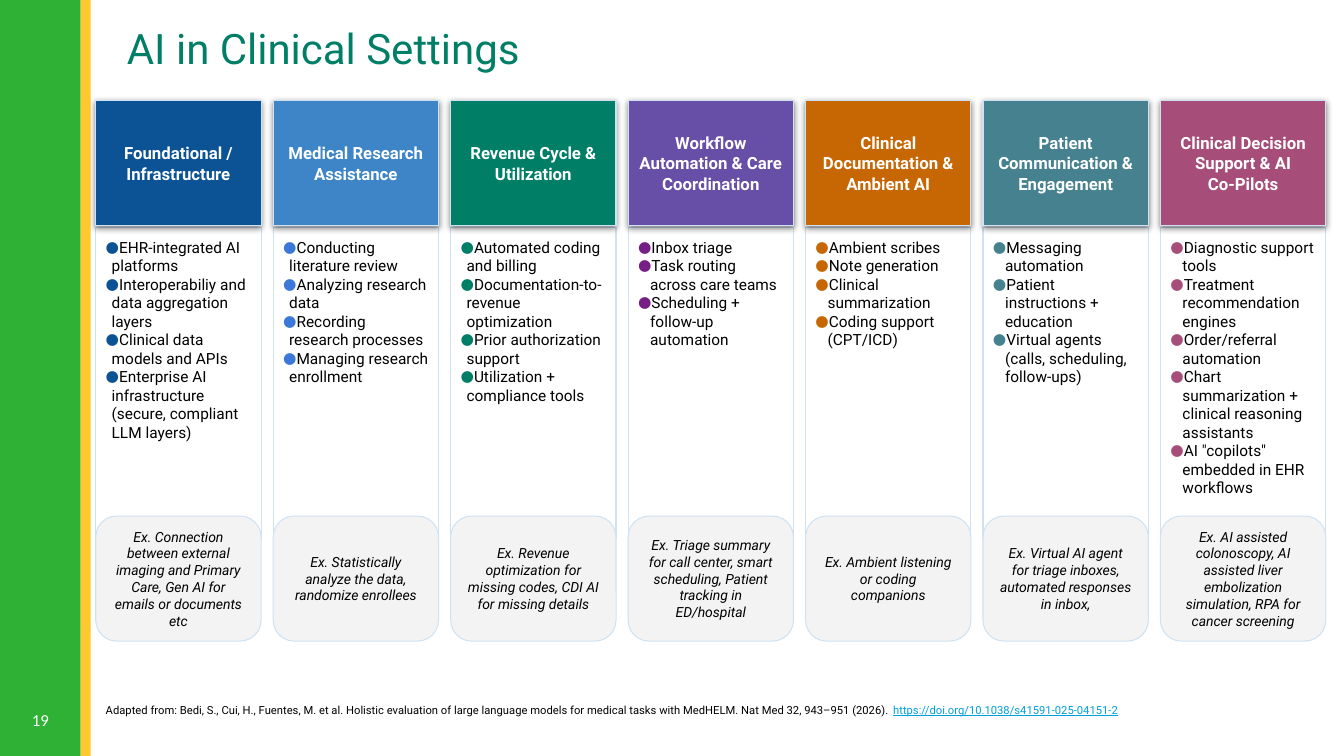
"""Builds the slide "AI in Clinical Settings": seven columns of uses with examples."""
from lxml import etree
from pptx import Presentation
from pptx.dml.color import RGBColor
from pptx.enum.shapes import MSO_SHAPE
from pptx.enum.text import MSO_ANCHOR, PP_ALIGN
from pptx.oxml.ns import qn
from pptx.util import Pt

PX = 9144
RECTANGLE, ROUNDED = MSO_SHAPE.RECTANGLE, MSO_SHAPE.ROUNDED_RECTANGLE
TOP, MIDDLE, BOTTOM = MSO_ANCHOR.TOP, MSO_ANCHOR.MIDDLE, MSO_ANCHOR.BOTTOM
LEFT, CENTER = PP_ALIGN.LEFT, PP_ALIGN.CENTER

WHITE = RGBColor(0xFF, 0xFF, 0xFF)
BLACK = RGBColor(0x00, 0x00, 0x00)
GREEN = RGBColor(0x2E, 0xB1, 0x35)
YELLOW = RGBColor(0xFF, 0xC8, 0x2E)
PALE_BLUE = RGBColor(0xCF, 0xE2, 0xF3)
PALE_GRAY = RGBColor(0xF3, 0xF3, 0xF3)
LINK_BLUE = RGBColor(0x00, 0xA0, 0xDE)
NAVY = RGBColor(0x0B, 0x53, 0x94)
BLUE = RGBColor(0x3D, 0x85, 0xC6)
BRIGHT_BLUE = RGBColor(0x3C, 0x78, 0xD8)
TEAL = RGBColor(0x00, 0x7E, 0x66)
VIOLET = RGBColor(0x67, 0x4E, 0xA7)
PURPLE = RGBColor(0x77, 0x1E, 0x86)
ORANGE = RGBColor(0xC7, 0x67, 0x03)
SLATE = RGBColor(0x45, 0x81, 0x8E)
MAUVE = RGBColor(0xA6, 0x4D, 0x79)

COLUMN_LEFT, COLUMN_PITCH, COLUMN_WIDTH = 95, 176, 164
CARD_HEIGHT = 124

COLUMNS = [
    ("Foundational / Infrastructure", NAVY, NAVY, 6,
     ["EHR-integrated AI platforms", "Interoperabiliy and data aggregation layers",
      "Clinical data models and APIs",
      "Enterprise AI infrastructure (secure, compliant LLM layers)"],
     "Ex. Connection between external imaging and Primary Care, Gen AI for emails or documents etc"),
    ("Medical Research Assistance", BLUE, BRIGHT_BLUE, 6,
     ["Conducting literature review", "Analyzing research data",
      "Recording research processes", "Managing research enrollment"],
     "Ex. Statistically analyze the data, randomize enrollees"),
    ("Revenue Cycle & Utilization", TEAL, TEAL, 6,
     ["Automated coding and billing", "Documentation-to- revenue optimization",
      "Prior authorization support", "Utilization + compliance tools"],
     "Ex. Revenue optimization for missing codes, CDI AI for missing details"),
    ("Workflow Automation & Care Coordination", VIOLET, PURPLE, 12,
     ["Inbox triage", "Task routing across care teams", "Scheduling + follow-up automation"],
     "Ex. Triage summary for call center, smart scheduling, Patient tracking in ED/hospital"),
    ("Clinical Documentation & Ambient AI", ORANGE, ORANGE, 12,
     ["Ambient scribes", "Note generation", "Clinical summarization", "Coding support (CPT/ICD)"],
     "Ex. Ambient listening or coding companions"),
    ("Patient Communication & Engagement", SLATE, SLATE, 12,
     ["Messaging automation", "Patient instructions + education",
      "Virtual agents (calls, scheduling, follow-ups)"],
     "Ex. Virtual AI agent for triage inboxes, automated responses in inbox,"),
    ("Clinical Decision Support & AI\nCo-Pilots", MAUVE, MAUVE, 12,
     ["Diagnostic support tools", "Treatment recommendation engines",
      "Order/referral automation", "Chart summarization + clinical reasoning assistants",
      'AI "copilots" embedded in EHR workflows'],
     "Ex. AI assisted colonoscopy, AI assisted liver embolization simulation, RPA for cancer screening"),
]

presentation = Presentation()
presentation.slide_width = 1333 * PX
presentation.slide_height = 750 * PX
slide = presentation.slides.add_slide(presentation.slide_layouts[6])


def add_box(left, top, width, height, preset=None, fill=None, line=None, anchor=MIDDLE, inset=10):
    """Adds a shape, or a text box when no preset is given."""
    place = [length * PX for length in (left, top, width, height)]
    if preset is None:
        shape = slide.shapes.add_textbox(*place)
    else:
        shape = slide.shapes.add_shape(preset, *place)
        shape.shadow.inherit = False
        shape.fill.solid()
        shape.fill.fore_color.rgb = fill
        if line is None:
            shape.line.fill.background()
        else:
            shape.line.color.rgb = line
            shape.line.width = Pt(0.75)
    frame = shape.text_frame
    frame.word_wrap = True
    frame.vertical_anchor = anchor
    frame.margin_left = frame.margin_right = 10 * PX
    frame.margin_top = frame.margin_bottom = inset * PX
    return shape


def add_text(paragraph, text, size, color, align=LEFT, name="Roboto", bold=None, italic=None):
    """Adds a run per line of text and returns the last one."""
    paragraph.alignment = align
    for index, part in enumerate(text.split("\n")):
        if index:
            paragraph.add_line_break()
        run = paragraph.add_run()
        run.text = part
        font = run.font
        font.size, font.name, font.bold, font.italic = Pt(size), name, bold, italic
        font.color.rgb = color
    return run


add_box(0, 0, 80, 750, RECTANGLE, GREEN)
add_box(80, 0, 10, 750, RECTANGLE, YELLOW)
number = add_box(0, 699, 80, 30, anchor=BOTTOM, inset=5)
add_text(number.text_frame.paragraphs[0], "19", 12, WHITE, CENTER, "Calibri")

title = add_box(116, 23, 1149, 55, inset=5).text_frame.paragraphs[0]
title.line_spacing = 0.9
add_text(title, "AI in Clinical Settings", 30, TEAL)

for index, (heading, fill, bullet_color, indent, uses, example) in enumerate(COLUMNS):
    left = COLUMN_LEFT + index * COLUMN_PITCH

    body = add_box(left, 226, COLUMN_WIDTH, 308, RECTANGLE, WHITE, PALE_BLUE, TOP)
    for row, use in enumerate(uses):
        frame = body.text_frame
        paragraph = frame.add_paragraph() if row else frame.paragraphs[0]
        properties = paragraph._p.get_or_add_pPr()
        properties.set("marL", str(indent * PX))
        properties.set("indent", str(-indent * PX))
        bullet_fill = etree.SubElement(properties, qn("a:buClr"))
        etree.SubElement(bullet_fill, qn("a:srgbClr"), val=str(bullet_color))
        etree.SubElement(properties, qn("a:buFont"), typeface="Roboto")
        etree.SubElement(properties, qn("a:buChar"), char="●")
        add_text(paragraph, use, 11, BLACK)

    card = add_box(left, 512, COLUMN_WIDTH, CARD_HEIGHT, ROUNDED, PALE_GRAY, PALE_BLUE)
    add_text(card.text_frame.paragraphs[0], example, 10, BLACK, CENTER, italic=True)

    header = add_box(left, 100, COLUMN_WIDTH, CARD_HEIGHT, RECTANGLE, fill, PALE_BLUE)
    add_text(header.text_frame.paragraphs[0], heading, 12, WHITE, CENTER, bold=True)
    effects = header._element.spPr.find(qn("a:effectLst"))
    shadow = etree.SubElement(effects, qn("a:outerShdw"), blurRad=str(Pt(4.5)),
                              dist=str(Pt(1.5)), dir="5400000", algn="bl", rotWithShape="0")
    shadow_color = etree.SubElement(shadow, qn("a:srgbClr"), val=str(BLACK))
    etree.SubElement(shadow_color, qn("a:alpha"), val="50000")

citation = add_box(95, 688, 1111, 34, anchor=TOP).text_frame.paragraphs[0]
citation.line_spacing = 1.15
add_text(citation, "Adapted from: Bedi, S., Cui, H., Fuentes, M. et al. Holistic evaluation of large "
         "language models for medical tasks with MedHELM. Nat Med 32, 943–951 (2026). ", 8, BLACK)
address = add_text(citation, "https://doi.org/10.1038/s41591-025-04151-2", 8, LINK_BLUE)
address.font.underline = True

presentation.save("out.pptx")
